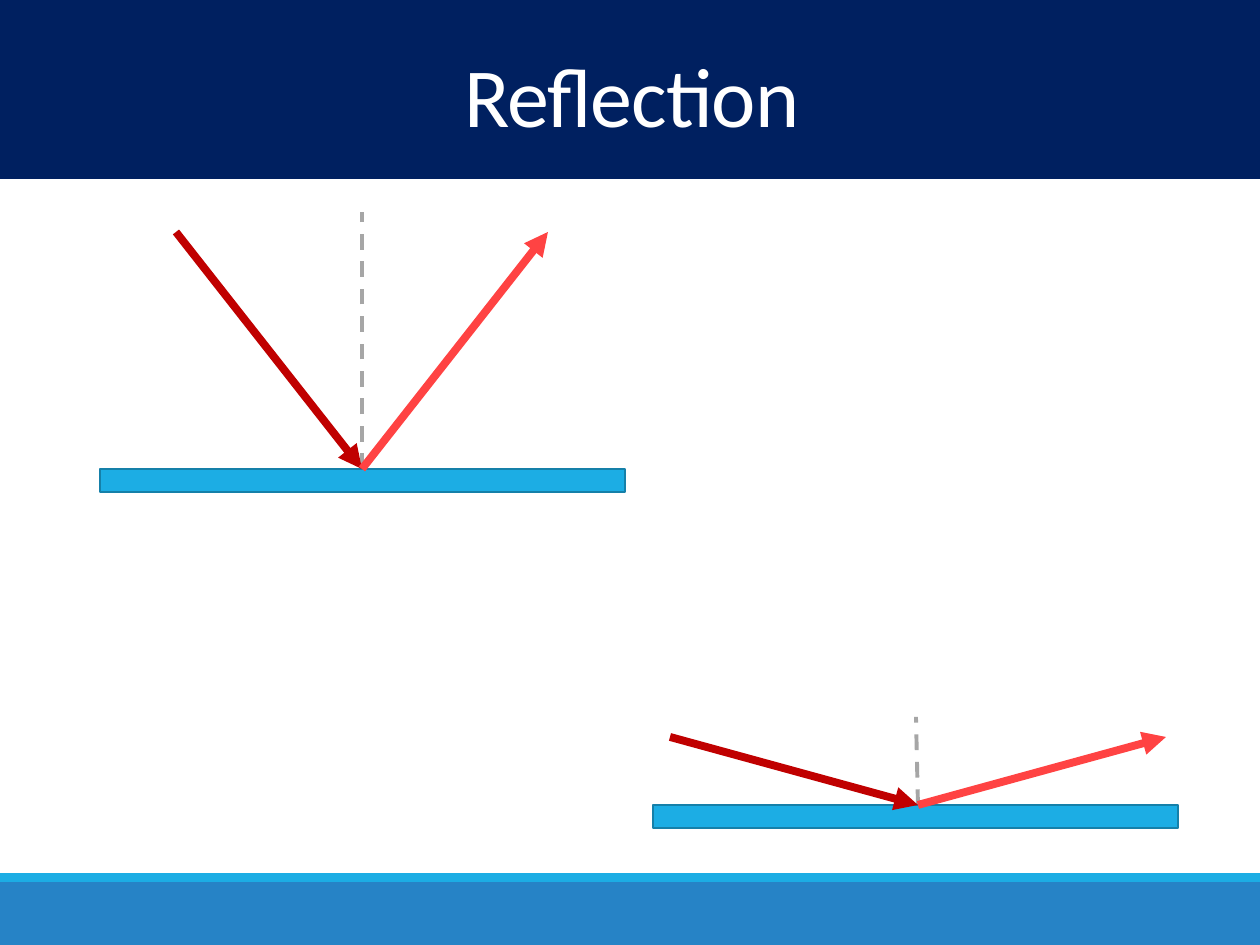
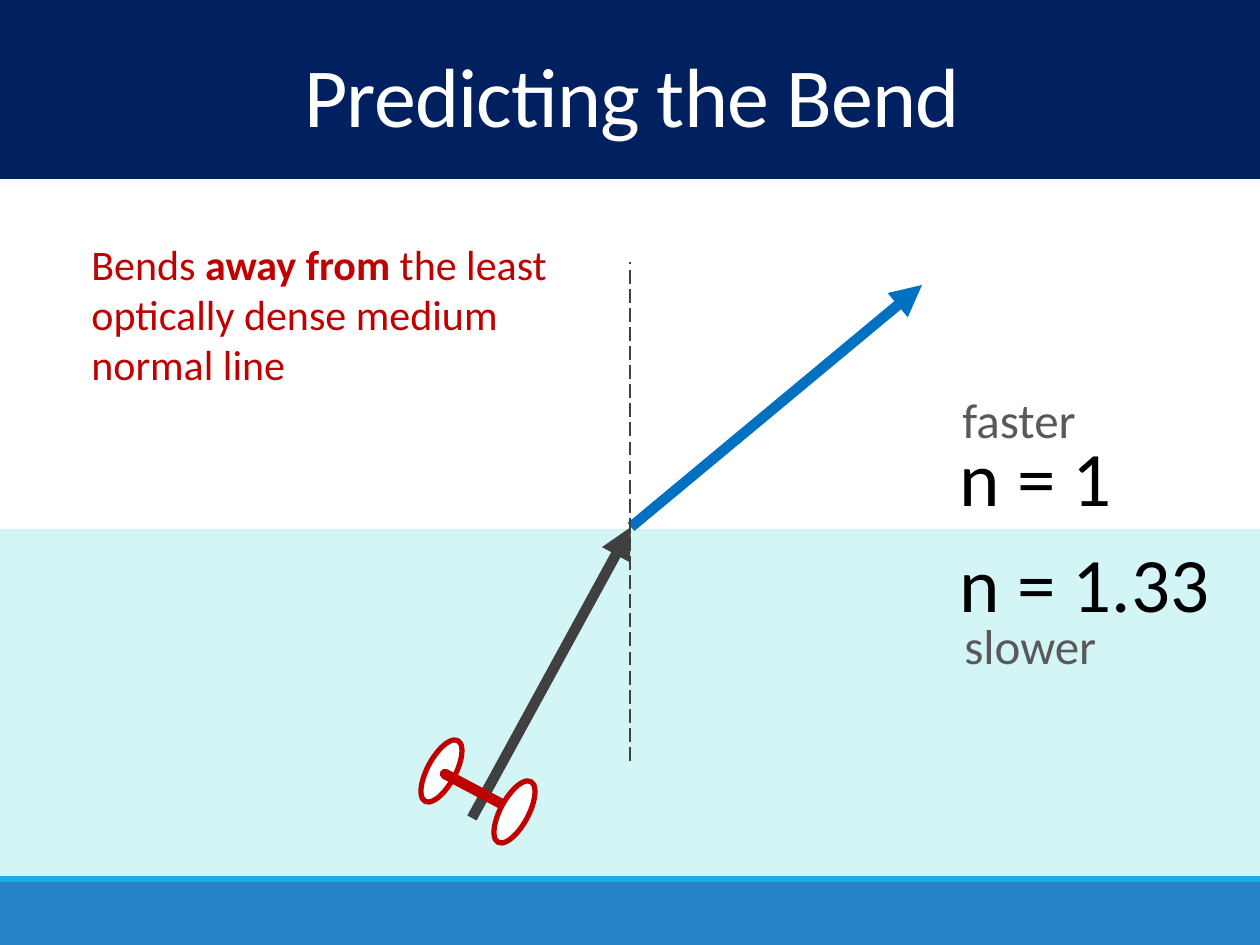
from pptx import Presentation, util as u
from pptx.dml.color import RGBColor
from pptx.enum import dml, shapes, text
from pptx.oxml.ns import qn
from lxml import etree

# Colours
NAVY = RGBColor(0x00, 0x20, 0x60)
FOOTER = RGBColor(0x26, 0x83, 0xC6)
CYAN = RGBColor(0x1C, 0xAD, 0xE4)
MIRROR_EDGE = RGBColor(0x15, 0x80, 0xA9)
WATER = RGBColor(0xD3, 0xF5, 0xF6)
WHITE = RGBColor(0xFF, 0xFF, 0xFF)
BLACK = RGBColor(0x00, 0x00, 0x00)
RED = RGBColor(0xC0, 0x00, 0x00)
LIGHT_RED = RGBColor(0xFF, 0x43, 0x43)
BLUE = RGBColor(0x00, 0x70, 0xC0)
DARK = RGBColor(0x40, 0x40, 0x40)
GREY = RGBColor(0x59, 0x59, 0x59)
PALE_GREY = RGBColor(0xA6, 0xA6, 0xA6)

FONT = "Calibri"
WIDTH, HEIGHT = 1260, 945
DASH = dml.MSO_LINE.DASH
LONG_DASH = dml.MSO_LINE.LONG_DASH

# Content: each ray lands on `hit` and leaves mirrored about the normal
MIRROR_SIZE = (525, 23)
MIRRORS = [
    {"corner": (100, 469), "hit": (362, 469), "normal_top": (362, 212), "reach": (186, 237)},
    {"corner": (653, 805), "hit": (918, 805), "normal_top": (916, 717), "reach": (248, 68)},
]

RULE = [("Bends ", False), ("away from ", True),
        ("the least optically dense medium normal line", False)]
MEDIA = [  # words, box, size, colour
    ("n = 1", (947, 423, 182, 106), 44, BLACK),
    ("n = 1.33", (947, 529, 280, 106), 44, BLACK),
    ("faster", (950, 383, 142, 72), 28, GREY),
    ("slower", (952, 609, 162, 72), 28, GREY),
]
BOUNDARY = (631, 527)
WHEEL_SIZE = (69, 28)
WHEELS = [(407, 757), (480, 798)]
WHEEL_TURN = 298.4
AXLE = [(445, 774), (515, 811)]


def px(length):
    return u.Emu(round(length * 914400 / 126))


def add_block(slide, box, fill, edge=None, weight=1, kind=shapes.MSO_SHAPE.RECTANGLE):
    block = slide.shapes.add_shape(kind, *map(px, box))
    block.shadow.inherit = False
    block.fill.solid()
    block.fill.fore_color.rgb = fill
    if edge is None:
        block.line.fill.background()
    else:
        block.line.color.rgb = edge
        block.line.width = u.Pt(weight)
    return block


def add_line(slide, start, end, colour, weight, dash=None, arrow=False):
    line = slide.shapes.add_connector(
        shapes.MSO_CONNECTOR.STRAIGHT, *map(px, (*start, *end)))
    line.line.color.rgb = colour
    line.line.width = u.Pt(weight)
    if dash:
        line.line.dash_style = dash
    properties = line._element.spPr
    outline = properties.find(qn("a:ln"))
    if arrow:
        etree.SubElement(outline, qn("a:tailEnd"), type="triangle")
    etree.SubElement(properties, qn("a:effectLst"))
    return outline


def add_words(slide, box, runs, size, colour, wrap=True):
    words = slide.shapes.add_textbox(*map(px, box))
    frame = words.text_frame
    frame.word_wrap = wrap
    frame.auto_size = text.MSO_AUTO_SIZE.SHAPE_TO_FIT_TEXT
    for wording, bold in runs:
        run = frame.paragraphs[0].add_run()
        run.text = wording
        run.font.name = FONT
        run.font.size = u.Pt(size)
        run.font.bold = bold
        run.font.color.rgb = colour
    return frame


def add_slide(deck, title):
    """Footer, accent strip, title band and title."""
    slide = deck.slides.add_slide(deck.slide_layouts[6])
    add_block(slide, (0, 882, WIDTH, 63), FOOTER)
    add_block(slide, (0, 873, WIDTH, 9), CYAN)
    add_block(slide, (0, 0, WIDTH, 179), NAVY)
    frame = add_words(slide, (4, 53, 1256, 106), [(title, False)], 48, WHITE)
    frame.auto_size = text.MSO_AUTO_SIZE.NONE
    frame.vertical_anchor = text.MSO_ANCHOR.TOP
    heading = frame.paragraphs[0]
    heading.alignment = text.PP_ALIGN.CENTER
    heading.line_spacing = 0.85
    heading.runs[0].font._element.set("spc", "-50")
    return slide


def build_reflection(deck):
    slide = add_slide(deck, "Reflection")
    for mirror in MIRRORS:
        hit = mirror["hit"]
        run, rise = mirror["reach"]
        source = (hit[0] - run, hit[1] - rise)
        target = (hit[0] + run, hit[1] - rise)
        add_line(slide, hit, mirror["normal_top"], PALE_GREY, 2.25, DASH)
        add_block(slide, (*mirror["corner"], *MIRROR_SIZE), CYAN, MIRROR_EDGE, 1.25)
        add_line(slide, source, hit, RED, 4.5, arrow=True)
        add_line(slide, hit, target, LIGHT_RED, 4.5, arrow=True)


def build_bend(deck):
    slide = add_slide(deck, "Predicting the Bend")
    # Water, rays and normal line
    add_block(slide, (0, 529, WIDTH, 347), WATER)
    add_line(slide, BOUNDARY, (922, 285), BLUE, 6, arrow=True)
    add_line(slide, (630, 761), (630, 262), DARK, 1, LONG_DASH)
    add_line(slide, (472, 818), BOUNDARY, DARK, 6, arrow=True)

    # Rule and media labels
    add_words(slide, (79, 232, 503, 165), RULE, 24, RED)
    for wording, box, size, colour in MEDIA:
        add_words(slide, box, [(wording, False)], size, colour, wrap=False)

    # Wheels, with the axle between them in depth
    for order, corner in enumerate(WHEELS):
        wheel = add_block(slide, (*corner, *WHEEL_SIZE), WHITE, RED, 3,
                          shapes.MSO_SHAPE.OVAL)
        wheel.rotation = WHEEL_TURN
        if order == 0:
            add_line(slide, *AXLE, RED, 6).set("cap", "rnd")


def main():
    deck = Presentation()
    deck.slide_width, deck.slide_height = px(WIDTH), px(HEIGHT)
    build_reflection(deck)
    build_bend(deck)
    deck.save("out.pptx")


if __name__ == "__main__":
    main()
